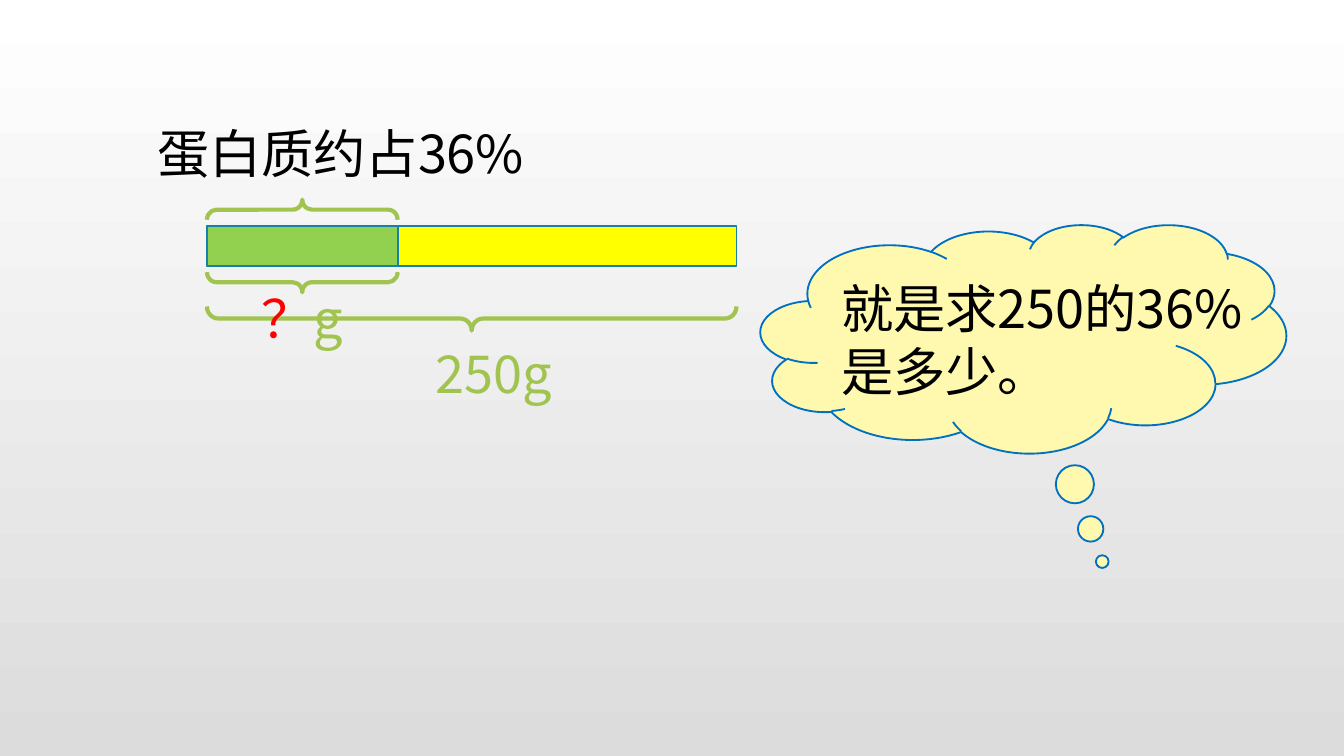
from pptx import Presentation
from pptx.dml.color import RGBColor
from pptx.enum.shapes import MSO_SHAPE
from pptx.enum.text import MSO_ANCHOR, PP_ALIGN
from pptx.util import Inches, Pt
from lxml import etree

RECT, BRACE, CLOUD = MSO_SHAPE.RECTANGLE, MSO_SHAPE.LEFT_BRACE, MSO_SHAPE.CLOUD_CALLOUT
TOP, LEFT = MSO_ANCHOR.TOP, PP_ALIGN.LEFT
UP, DOWN = 90, 270
FONT = "Noto Sans CJK SC"
BLACK, RED, GREEN, BLUE = "000000", "FF0000", "A1C450", "0070C0"
SLIDE_WIDTH = 10
SLIDE_HEIGHT = SLIDE_WIDTH * 9 / 16

# Content: the bar stands for the whole, its first part for the protein
BAR_LEFT, BAR_TOP, BAR_WIDTH, BAR_HEIGHT = 1.54, 1.68, 3.94, 0.3
PROTEIN_SHARE = 0.36
BAR_PARTS = [(1, "FFFF00"), (PROTEIN_SHARE, "92D050")]  # share, fill
BRACES = [  # share of bar, middle height, depth, direction
    (1, 2.37, 0.18, DOWN),
    (PROTEIN_SHARE, 1.56, 0.15, UP),
    (PROTEIN_SHARE, 2.10, 0.15, DOWN),
]
LABELS = [  # box, coloured pieces
    ((3.14, 2.49, 1.56, 0.57), [("250g", GREEN)]),
    ((1.07, 0.85, 3.78, 0.57), [("蛋白质约占36%", BLACK)]),
    ((1.85, 2.08, 1.34, 0.57), [("？", RED), ("g", GREEN)]),
    ((6.16, 2.01, 3.42, 1.04), [("就是求250的36%是多少。", BLACK)]),
]
CLOUD_BOX = (5.66, 1.67, 3.91, 1.7)


def color(value):
    return RGBColor.from_string(value)


def add_outline(kind, box, line, width, fill=None, adjustments=()):
    shape = slide.shapes.add_shape(kind, *map(Inches, box))
    shape.shadow.inherit = False
    if fill:
        shape.fill.solid()
        shape.fill.fore_color.rgb = color(fill)
    else:
        shape.fill.background()
    shape.line.color.rgb = color(line)
    shape.line.width = Pt(width)
    for index, value in enumerate(adjustments):
        shape.adjustments[index] = value
    return shape


def add_text(box, pieces, size=28, font=FONT, line_height=33.6):
    frame = slide.shapes.add_textbox(*map(Inches, box)).text_frame
    frame.word_wrap = True
    frame.vertical_anchor = TOP
    paragraph = frame.paragraphs[0]
    paragraph.alignment = LEFT
    paragraph.line_spacing = Pt(line_height)
    for text, text_color in pieces:
        run = paragraph.add_run()
        run.text = text
        run.font.size = Pt(size)
        run.font.name = font
        run.font.color.rgb = color(text_color)
        # East Asian typeface
        latin = run.font._element.find("{*}latin")
        east_asian = etree.Element(latin.tag.replace("latin", "ea"), typeface=font)
        latin.addnext(east_asian)


prs = Presentation()
prs.slide_width, prs.slide_height = Inches(SLIDE_WIDTH), Inches(SLIDE_HEIGHT)
slide = prs.slides.add_slide(prs.slide_layouts[6])

# Background, light at the top
background = slide.background.fill
background.gradient()
background.gradient_angle = 270
for stop, stop_color in zip(background.gradient_stops, ("FFFFFF", "DCDCDC")):
    stop.color.rgb = color(stop_color)

# Thought bubble
add_outline(CLOUD, CLOUD_BOX, BLUE, 1, "FFF9B0", (0.15, 0.976))

# Bar
for share, fill in BAR_PARTS:
    add_outline(RECT, (BAR_LEFT, BAR_TOP, BAR_WIDTH * share, BAR_HEIGHT), "1580A9", 1, fill)

# Braces, upright boxes turned about their centre
for share, middle, depth, direction in BRACES:
    length = BAR_WIDTH * share
    center = BAR_LEFT + length / 2
    box = (center - depth / 2, middle - length / 2, depth, length)
    brace = add_outline(BRACE, box, GREEN, 2.25, adjustments=(0.47, 0.5))
    brace.rotation = direction

# Labels
for box, pieces in LABELS:
    add_text(box, pieces)

prs.save("out.pptx")
